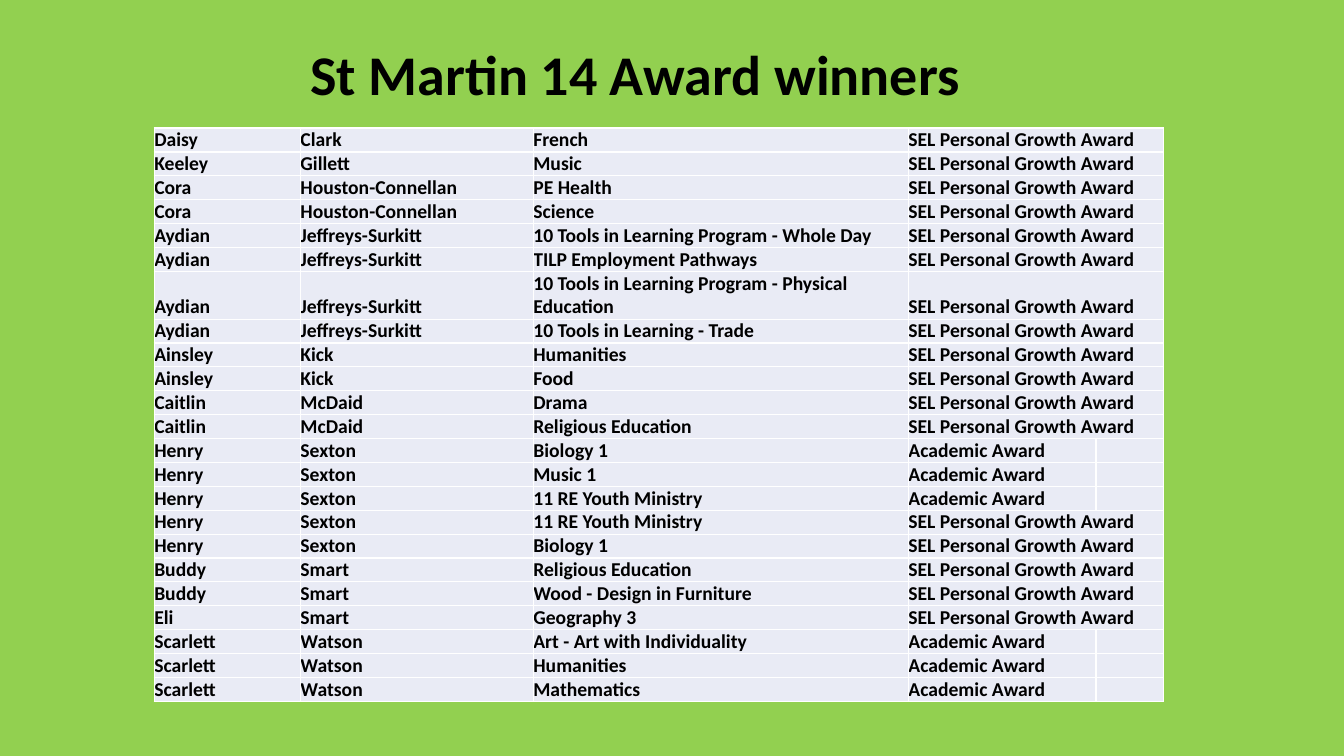
from lxml.etree import SubElement
from pptx import Presentation
from pptx.dml.color import RGBColor
from pptx.enum.text import MSO_ANCHOR, MSO_AUTO_SIZE, PP_ALIGN
from pptx.oxml.ns import qn
from pptx.util import Inches, Pt

GREEN = RGBColor(0x92, 0xD0, 0x50)
LAVENDER = RGBColor(0xE9, 0xEB, 0xF5)
BLACK = RGBColor(0, 0, 0)

GROWTH = "SEL Personal Growth Award"
ACADEMIC = "Academic Award"
COL_WIDTHS = [1.45, 2.31, 3.72, 1.86, 0.67]
ROW_HEIGHT = 0.21
WINNERS = [
    ("Daisy", "Clark", "French", GROWTH),
    ("Keeley", "Gillett", "Music", GROWTH),
    ("Cora", "Houston-Connellan", "PE Health", GROWTH),
    ("Cora", "Houston-Connellan", "Science", GROWTH),
    ("Aydian", "Jeffreys-Surkitt", "10 Tools in Learning Program - Whole Day", GROWTH),
    ("Aydian", "Jeffreys-Surkitt", "TILP Employment Pathways", GROWTH),
    ("Aydian", "Jeffreys-Surkitt", "10 Tools in Learning Program - Physical Education", GROWTH),
    ("Aydian", "Jeffreys-Surkitt", "10 Tools in Learning - Trade", GROWTH),
    ("Ainsley", "Kick", "Humanities", GROWTH),
    ("Ainsley", "Kick", "Food", GROWTH),
    ("Caitlin", "McDaid", "Drama", GROWTH),
    ("Caitlin", "McDaid", "Religious Education", GROWTH),
    ("Henry", "Sexton", "Biology 1", ACADEMIC),
    ("Henry", "Sexton", "Music 1", ACADEMIC),
    ("Henry", "Sexton", "11 RE Youth Ministry", ACADEMIC),
    ("Henry", "Sexton", "11 RE Youth Ministry", GROWTH),
    ("Henry", "Sexton", "Biology 1", GROWTH),
    ("Buddy", "Smart", "Religious Education", GROWTH),
    ("Buddy", "Smart", "Wood - Design in Furniture", GROWTH),
    ("Eli", "Smart", "Geography 3", GROWTH),
    ("Scarlett", "Watson", "Art - Art with Individuality", ACADEMIC),
    ("Scarlett", "Watson", "Humanities", ACADEMIC),
    ("Scarlett", "Watson", "Mathematics", ACADEMIC),
]


def add_text(p, text, size):
    r = p.add_run()
    r.text = text
    for name, value in {"name": "Calibri", "size": Pt(size), "bold": True}.items():
        setattr(r.font, name, value)
    r.font.color.rgb = BLACK


prs = Presentation()
prs.slide_width, prs.slide_height = Inches(13.33), Inches(7.5)
slide = prs.slides.add_slide(prs.slide_layouts[5])
slide.background.fill.solid()
slide.background.fill.fore_color.rgb = GREEN

title = slide.shapes.title
title.left, title.top = Inches(2.66), Inches(0.52)
title.width, title.height = Inches(7.28), Inches(0.5)
tf = title.text_frame
tf.auto_size = MSO_AUTO_SIZE.NONE
tf.vertical_anchor = MSO_ANCHOR.MIDDLE
p = tf.paragraphs[0]
p.alignment = PP_ALIGN.CENTER
p.line_spacing = 0.9
add_text(p, "St Martin 14 Award winners", 40)

frame = slide.shapes.add_table(
    len(WINNERS), len(COL_WIDTHS), Inches(1.53), Inches(1.27),
    Inches(sum(COL_WIDTHS)), Inches(5.66))
table = frame.table
table.first_row = table.horz_banding = False
for column, width in zip(table.columns, COL_WIDTHS):
    column.width = Inches(width)

cell_format = {"margin_left": 0, "margin_right": 0, "margin_top": 0,
               "margin_bottom": 0, "vertical_anchor": MSO_ANCHOR.BOTTOM}
for i, winner in enumerate(WINNERS):
    table.rows[i].height = Inches(ROW_HEIGHT)
    for cell, text in zip(table.rows[i].cells, winner + ("",)):
        for name, value in cell_format.items():
            setattr(cell, name, value)
        cell.fill.solid()
        cell.fill.fore_color.rgb = LAVENDER
        p = cell.text_frame.paragraphs[0]
        if text:
            add_text(p, text, 14)
        else:
            # Keeps an empty cell from stretching its row
            SubElement(p._p, qn("a:endParaRPr"), sz="1400")
    if winner[-1] == GROWTH:
        table.cell(i, 3).merge(table.cell(i, 4))
frame.height = Inches(5.66)

prs.save("out.pptx")
